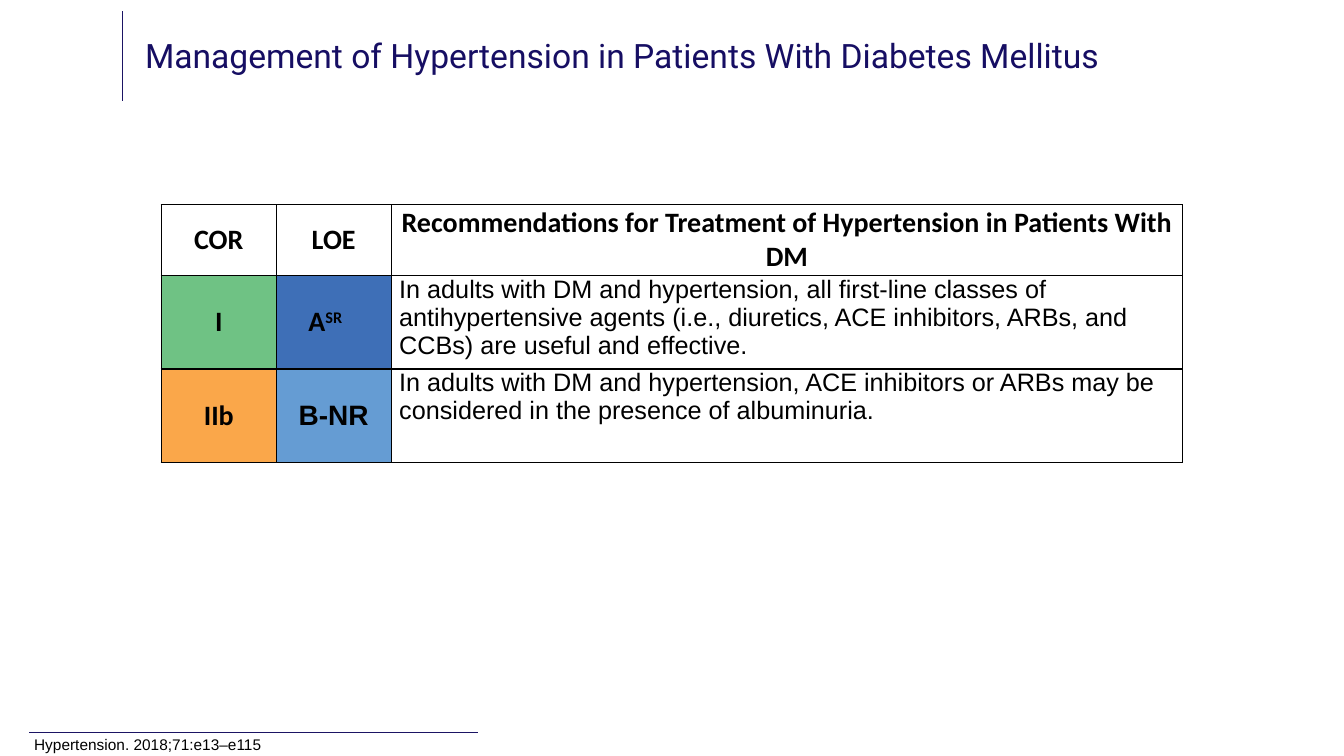
from dataclasses import dataclass

from lxml import etree
from pptx import Presentation
from pptx.dml.color import RGBColor
from pptx.enum.shapes import MSO_CONNECTOR
from pptx.enum.text import MSO_ANCHOR, PP_ALIGN
from pptx.oxml.ns import qn
from pptx.util import Inches, Pt

STRAIGHT = MSO_CONNECTOR.STRAIGHT
TOP, MIDDLE = MSO_ANCHOR.TOP, MSO_ANCHOR.MIDDLE
LEFT, CENTER = PP_ALIGN.LEFT, PP_ALIGN.CENTER


@dataclass(frozen=True)
class Theme:
    title: str = "160E63"
    rule: str = "1B1464"
    text: str = "000000"
    border: str = "000000"
    white: str = "FFFFFF"
    cor_strong: str = "6FC284"
    cor_weak: str = "FAA74A"
    loe_a: str = "3E6FB7"
    loe_b: str = "659CD3"
    title_font: str = "Roboto"
    label_font: str = "Calibri"
    body_font: str = "Arial"
    title_size: int = 24
    label_size: int = 20
    body_size: int = 18
    source_size: int = 11


T = Theme()
LABEL = {"name": T.label_font, "size": Pt(T.label_size), "bold": True}
ARIAL_LABEL = {**LABEL, "name": T.body_font}
BODY = {"name": T.body_font, "size": Pt(T.body_size), "bold": False}

# Each cell: text, superscript, fill, format, alignment, left margin
HEADER = [(text, "", T.white, LABEL, CENTER, 0.08) for text in (
    "COR", "LOE",
    "Recommendations for Treatment of Hypertension in Patients With DM")]
ROWS = [
    HEADER,
    [("I", "", T.cor_strong, LABEL, CENTER, 0.08),
     ("A", "SR", T.loe_a, LABEL, LEFT, 0.32),
     ("In adults with DM and hypertension, all first-line classes of "
      "antihypertensive agents (i.e., diuretics, ACE inhibitors, ARBs, and "
      "CCBs) are useful and effective.", "", T.white, BODY, LEFT, 0.08)],
    [("IIb", "", T.cor_weak, LABEL, CENTER, 0.08),
     ("B-NR", "", T.loe_b, ARIAL_LABEL, CENTER, 0.08),
     ("In adults with DM and hypertension, ACE inhibitors or ARBs may be "
      "considered in the presence of albuminuria.",
      "", T.white, BODY, LEFT, 0.08)],
]


def add_run(p, text, fmt, color=T.text):
    r = p.add_run()
    r.text = text
    for name, value in fmt.items():
        setattr(r.font, name, value)
    r.font.color.rgb = RGBColor.from_string(color)
    return r


def add_rule(s, x1, y1, x2, y2):
    line = s.shapes.add_connector(
        STRAIGHT, Inches(x1), Inches(y1), Inches(x2), Inches(y2))
    line.line.color.rgb = RGBColor.from_string(T.rule)
    line.line.width = Pt(0.5)
    etree.SubElement(line._element.spPr, qn("a:effectLst"))


def add_text(s, box, text, fmt, color, margin_y):
    tf = s.shapes.add_textbox(*map(Inches, box)).text_frame
    tf.word_wrap = True
    tf.vertical_anchor = MIDDLE
    tf.margin_top = tf.margin_bottom = Inches(margin_y)
    p = tf.paragraphs[0]
    p.line_spacing = 0.9
    add_run(p, text, fmt, color)


def set_borders(cell):
    tcPr = cell._tc.get_or_add_tcPr()
    for i, side in enumerate(("lnL", "lnR", "lnT", "lnB")):
        ln = etree.Element(qn(f"a:{side}"), w=str(Pt(1)))
        fill = etree.SubElement(ln, qn("a:solidFill"))
        etree.SubElement(fill, qn("a:srgbClr"), val=T.border)
        tcPr.insert(i, ln)


def add_title(s, x, y, w, h):
    add_rule(s, x, y + 0.06, x, y + 0.95)
    add_text(s, (x + 0.13, y, w - 0.13, h),
             "Management of Hypertension in Patients With Diabetes Mellitus",
             {"name": T.title_font, "size": Pt(T.title_size)}, T.title, 0.05)


def add_recommendations(s, x, y, widths, heights):
    table = s.shapes.add_table(
        len(heights), len(widths), Inches(x), Inches(y),
        Inches(sum(widths)), Inches(sum(heights))).table
    table.first_row = table.horz_banding = False
    for col, w in zip(table.columns, widths):
        col.width = Inches(w)
    for row, h, values in zip(table.rows, heights, ROWS):
        row.height = Inches(h)
        for cell, value in zip(row.cells, values):
            fill_cell(cell, *value)


def fill_cell(cell, text, superscript, fill, fmt, align, margin_left):
    cell.margin_left, cell.margin_right = Inches(margin_left), Inches(0.08)
    cell.margin_top = cell.margin_bottom = 0
    cell.vertical_anchor = TOP if fmt is BODY else MIDDLE
    cell.fill.solid()
    cell.fill.fore_color.rgb = RGBColor.from_string(fill)
    p = cell.text_frame.paragraphs[0]
    p.alignment = align
    add_run(p, text, fmt)
    if superscript:
        r = add_run(p, superscript, fmt)
        r._r.get_or_add_rPr().set("baseline", "30000")
    set_borders(cell)


def add_source(s, x, y, w, h):
    add_rule(s, x + 0.05, y, x + 4.5, y)
    add_text(s, (x, y + 0.03, w, h), "Hypertension. 2018;71:e13–e115",
             {"name": T.body_font, "size": Pt(T.source_size)}, T.text, 0)


def main():
    prs = Presentation()
    prs.slide_width, prs.slide_height = Inches(13.33), Inches(7.5)
    s = prs.slides.add_slide(prs.slide_layouts[6])
    add_title(s, 1.21, 0.05, 10.25, 1.05)
    add_recommendations(s, 1.6, 2.03, (1.14, 1.14, 7.85), (0.7, 0.93, 0.93))
    add_source(s, 0.24, 7.27, 8.33, 0.2)
    prs.save("out.pptx")


if __name__ == "__main__":
    main()
